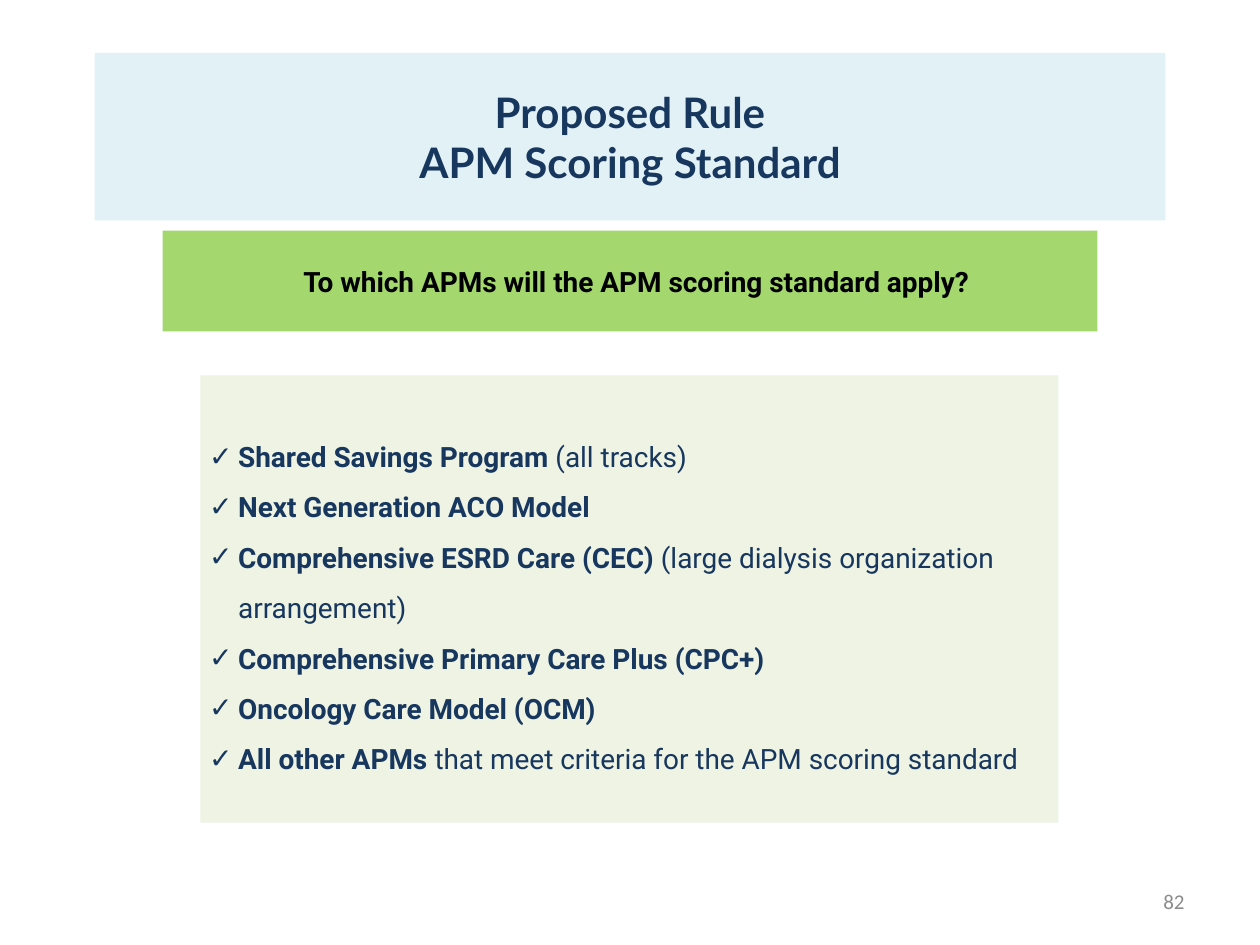
import pptx
import pptx.dml.color
import pptx.enum.shapes
import pptx.enum.text
import pptx.oxml.ns
import pptx.util
from lxml import etree

Inches = pptx.util.Inches
Pt = pptx.util.Pt
ALIGN = pptx.enum.text.PP_ALIGN
qn = pptx.oxml.ns.qn

COLORS = {
    "navy": "17375E",
    "black": "000000",
    "gray": "8C8C8C",
    "pale_blue": "DBEEF4",
    "green": "92D050",
    "pale_green": "EBF1DE",
}

# Each entry: bold name, plain remark
MODELS = [
    ("Shared Savings Program ", "(all tracks)"),
    ("Next Generation ACO Model", ""),
    ("Comprehensive ESRD Care (CEC) ", "(large dialysis organization arrangement)"),
    ("Comprehensive Primary Care Plus (CPC+)", ""),
    ("Oncology Care Model (OCM)", ""),
    ("All other APMs ", "that meet criteria for the APM scoring standard"),
]


def color(name):
    return pptx.dml.color.RGBColor.from_string(COLORS[name])


def place(shape, left, top, width, height):
    shape.left, shape.top = Inches(left), Inches(top)
    shape.width, shape.height = Inches(width), Inches(height)


def fill_translucent(shape, name, opacity):
    """Fill with a colour at an opacity in percent."""
    shape.fill.solid()
    shape.fill.fore_color.rgb = color(name)
    tint = shape.fill._xPr.find(qn("a:solidFill"))[0]
    etree.SubElement(tint, qn("a:alpha"), val=str(opacity * 1000))


def set_frame(shape, side=0.1, edge=0.05):
    """Centre the text vertically with the given insets and return its frame."""
    frame = shape.text_frame
    frame.word_wrap = True
    frame.auto_size = pptx.enum.text.MSO_AUTO_SIZE.NONE
    frame.vertical_anchor = pptx.enum.text.MSO_ANCHOR.MIDDLE
    frame.margin_left = frame.margin_right = Inches(side)
    frame.margin_top = frame.margin_bottom = Inches(edge)
    return frame


def add_paragraph(frame, index, align):
    para = frame.paragraphs[0] if index == 0 else frame.add_paragraph()
    para.alignment = align
    para.space_before = Pt(0)
    return para


def add_span(para, text, font, size, name, bold=False):
    span = para.add_run()
    span.text = text
    span.font.name = font
    span.font.size = Pt(size)
    span.font.bold = bold
    span.font.color.rgb = color(name)


def set_indent(para, left, first=0.0):
    properties = para._p.get_or_add_pPr()
    properties.set("marL", str(Inches(left)))
    properties.set("indent", str(Inches(first)))
    return properties


def add_check_bullet(para):
    properties = set_indent(para, 0.23, -0.23)
    etree.SubElement(properties, qn("a:buFont"), typeface="Arial")
    etree.SubElement(properties, qn("a:buChar"), char="✓")


def fill_title(title):
    place(title, 0.75, 0.42, 8.5, 1.33)
    fill_translucent(title, "pale_blue", 82)
    frame = set_frame(title)
    for index, line in enumerate(["Proposed Rule", "APM Scoring Standard"]):
        para = add_paragraph(frame, index, ALIGN.CENTER)
        add_span(para, line, "Lato", 24, "navy", bold=True)


def fill_model_list(body):
    place(body, 1.59, 2.98, 6.81, 3.55)
    fill_translucent(body, "pale_green", 83)
    frame = set_frame(body, 0.07, 0.04)
    for index, (model, remark) in enumerate(MODELS):
        para = add_paragraph(frame, index, ALIGN.LEFT)
        para.line_spacing = 1.5
        add_check_bullet(para)
        add_span(para, model, "Roboto", 16, "navy", bold=True)
        if remark:
            add_span(para, remark, "Roboto", 16, "navy")


def add_question(page):
    box = page.shapes.add_shape(pptx.enum.shapes.MSO_SHAPE.RECTANGLE, 0, 0, 0, 0)
    place(box, 1.29, 1.83, 7.42, 0.8)
    box.shadow.inherit = False
    box.line.fill.background()
    fill_translucent(box, "green", 83)
    para = add_paragraph(set_frame(box, 0.23, 0.07), 0, ALIGN.CENTER)
    para.space_after = Pt(4.5)
    set_indent(para, 0.1)
    add_span(para, "To which APMs will the APM scoring standard apply?",
             "Roboto", 16, "black", bold=True)


def add_page_number(page):
    box = page.shapes.add_textbox(0, 0, 0, 0)
    place(box, 7.17, 6.95, 2.33, 0.4)
    para = add_paragraph(set_frame(box), 0, ALIGN.RIGHT)
    add_span(para, "82", "Calibri", 12, "gray")


def main():
    deck = pptx.Presentation()
    deck.slide_width, deck.slide_height = Inches(10), Inches(7.5)
    page = deck.slides.add_slide(deck.slide_layouts[1])
    fill_title(page.shapes.title)
    fill_model_list(page.placeholders[1])
    add_question(page)
    add_page_number(page)
    deck.save("out.pptx")


if __name__ == "__main__":
    main()
